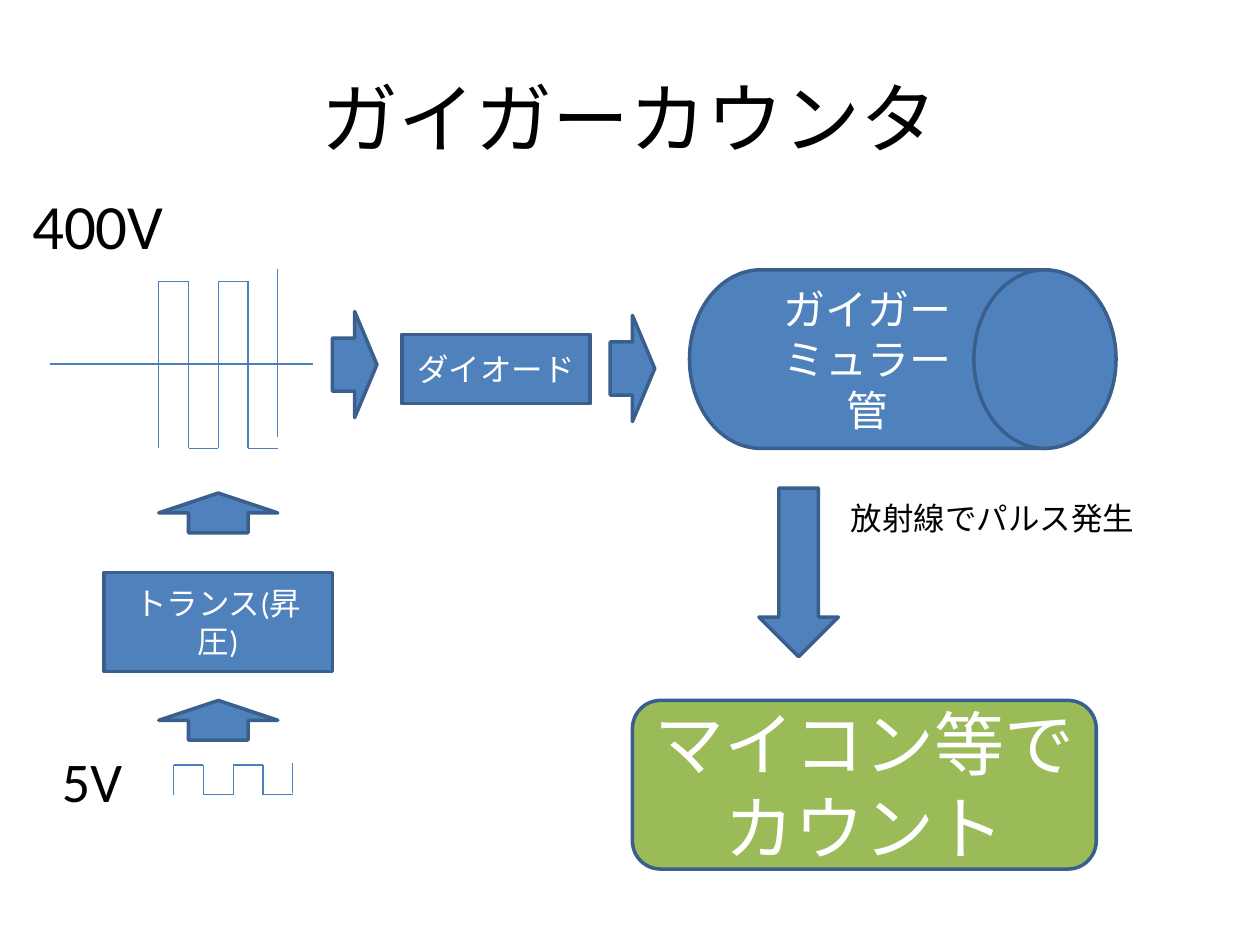
import itertools
from dataclasses import dataclass
from typing import Optional

import pptx
import pptx.dml.color
import pptx.enum.shapes
import pptx.enum.text
import pptx.oxml.ns
import pptx.shapes.autoshape
import pptx.shapes.connector
import pptx.slide
import pptx.text.text
import pptx.util
import lxml.etree

RGBColor = pptx.dml.color.RGBColor
Shape = pptx.enum.shapes.MSO_SHAPE
Align = pptx.enum.text.PP_ALIGN
Anchor = pptx.enum.text.MSO_ANCHOR

BLUE = RGBColor(0x4F, 0x81, 0xBD)
DARK_BLUE = RGBColor(0x3A, 0x5F, 0x8C)
WAVE_BLUE = RGBColor(0x4B, 0x7E, 0xBC)
GREEN = RGBColor(0x9B, 0xBB, 0x59)
WHITE = RGBColor(0xFF, 0xFF, 0xFF)
BLACK = RGBColor(0x00, 0x00, 0x00)

FONT = "Calibri"
COLUMNS = 127
SLIDE_WIDTH = pptx.util.Inches(10)
SLIDE_HEIGHT = pptx.util.Inches(7.5)
PULSE_COLUMNS = 3


@dataclass(frozen=True)
class Area:
    column: float
    row: float
    columns: float
    rows: float


@dataclass(frozen=True)
class Block:
    preset: Shape
    area: Area
    text: str = ""
    size: int = 18
    fill: RGBColor = BLUE
    rotation: int = 0


@dataclass(frozen=True)
class Label:
    area: Area
    text: str
    size: int
    align: Optional[Align] = None
    anchor: Anchor = Anchor.TOP


@dataclass(frozen=True)
class Wave:
    column: float
    row: float
    rows: float
    final_lift: float


BLOCKS = [
    Block(Shape.FLOWCHART_DIRECT_ACCESS_STORAGE, Area(69.5, 27.2, 43, 18), "ガイガー\nミュラー管", 24),
    Block(Shape.RECTANGLE, Area(10.5, 57.7, 23, 10), "トランス(昇圧)"),
    Block(Shape.DOWN_ARROW, Area(16, 70.6, 12, 4), rotation=180),
    Block(Shape.DOWN_ARROW, Area(16, 49.7, 12, 4), rotation=180),
    Block(Shape.RIGHT_ARROW, Area(33.5, 31.4, 4.5, 10.7)),
    Block(Shape.RECTANGLE, Area(40.5, 33.7, 19, 7), "ダイオード"),
    Block(Shape.RIGHT_ARROW, Area(61.5, 31.8, 4.5, 10.7)),
    Block(Shape.DOWN_ARROW, Area(76.5, 49.2, 8, 17)),
    Block(Shape.ROUNDED_RECTANGLE, Area(63.75, 70.6, 46.75, 17), "マイコン等でカウント", 40, GREEN),
]

LABELS = [
    Label(Area(6.35, 3.8, 114.3, 15.9), "ガイガーカウンタ", 44, Align.CENTER, Anchor.MIDDLE),
    Label(Area(5, 74.6, 11, 8.1), "5V", 32),
    Label(Area(2, 18.2, 17, 9), "400V", 36),
    Label(Area(84.5, 49.7, 33, 5.1), "放射線でパルス発生", 18),
]

WAVES = [Wave(17.5, 77.1, 3, 0.15), Wave(16, 28.35, 16.85, 1.2)]


def cells(count: float) -> pptx.util.Emu:
    return pptx.util.Emu(round(SLIDE_WIDTH * count / COLUMNS))


def frame(area: Area) -> tuple:
    return tuple(map(cells, (area.column, area.row, area.columns, area.rows)))


def write(body: pptx.text.text.TextFrame, text: str, size: int, color: RGBColor,
          align: Optional[Align], anchor: Anchor) -> None:
    body.word_wrap = True
    body.vertical_anchor = anchor
    body.text = text
    for para in body.paragraphs:
        para.alignment = align
        para.font.name = FONT
        para.font.size = pptx.util.Pt(size)
        para.font.color.rgb = color


def draw_block(page: pptx.slide.Slide, block: Block) -> None:
    shape = page.shapes.add_shape(block.preset, *frame(block.area))
    shape.rotation = block.rotation
    shape.shadow.inherit = False
    shape.fill.solid()
    shape.fill.fore_color.rgb = block.fill
    shape.line.color.rgb = DARK_BLUE
    shape.line.width = pptx.util.Pt(2)
    if block.text:
        write(shape.text_frame, block.text, block.size, WHITE, Align.CENTER, Anchor.MIDDLE)


def draw_label(page: pptx.slide.Slide, label: Label) -> None:
    box = page.shapes.add_textbox(*frame(label.area))
    write(box.text_frame, label.text, label.size, BLACK, label.align, label.anchor)


def draw_line(shapes, start: tuple, end: tuple) -> None:
    line = shapes.add_connector(
        pptx.enum.shapes.MSO_CONNECTOR.STRAIGHT, *map(cells, (*start, *end)))
    line.line.color.rgb = WAVE_BLUE
    line.line.width = pptx.util.Pt(0.75)
    properties = line.element.find(pptx.oxml.ns.qn("p:spPr"))
    lxml.etree.SubElement(properties, pptx.oxml.ns.qn("a:effectLst"))


def draw_wave(page: pptx.slide.Slide, wave: Wave) -> None:
    group = page.shapes.add_group_shape()
    top, bottom = wave.row, wave.row + wave.rows
    edges = [wave.column + PULSE_COLUMNS * step for step in range(5)]
    levels = [bottom, top, bottom, top, bottom]
    corners = [(edges[0], bottom)]
    for left, right, level in zip(edges, edges[1:], levels[1:]):
        corners += [(left, level), (right, level)]
    corners = [corner for corner, _ in itertools.groupby(corners)]
    for start, end in itertools.pairwise(corners):
        draw_line(group.shapes, start, end)
    draw_line(group.shapes, (edges[-1], bottom - wave.final_lift),
              (edges[-1], top - wave.final_lift))


def main() -> None:
    deck = pptx.Presentation()
    deck.slide_width = SLIDE_WIDTH
    deck.slide_height = SLIDE_HEIGHT
    page = deck.slides.add_slide(deck.slide_layouts[6])
    for block in BLOCKS:
        draw_block(page, block)
    for wave in WAVES:
        draw_wave(page, wave)
    draw_line(page.shapes, (5, 36.7), (31.5, 36.7))
    for label in LABELS:
        draw_label(page, label)
    deck.save("out.pptx")


if __name__ == "__main__":
    main()
